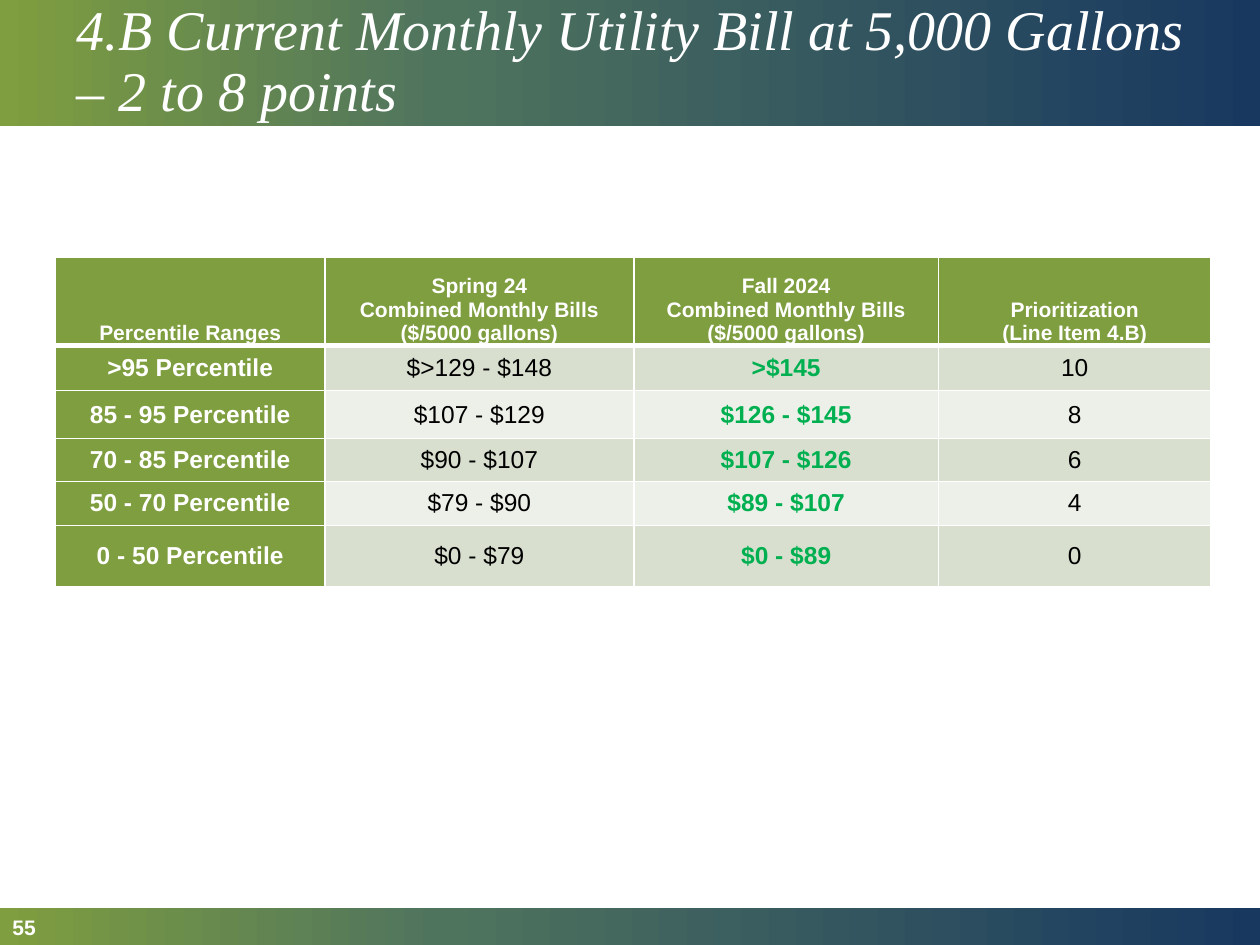
import dataclasses

import lxml.etree
import pptx
import pptx.dml.color
import pptx.enum.shapes
import pptx.enum.text
import pptx.oxml.ns
import pptx.util

Inches = pptx.util.Inches
Pt = pptx.util.Pt
Align = pptx.enum.text.PP_ALIGN
Anchor = pptx.enum.text.MSO_ANCHOR
qn = pptx.oxml.ns.qn

WHITE, BLACK = "FFFFFF", "000000"
OLIVE, GREEN = "7F9E3F", "00B050"
BANDS = ("D8DFCF", "ECF0E8")
STOPS = ((0, OLIVE), (35, "4F745E"), (100, "183860"))


@dataclasses.dataclass
class Box:
    left: float
    top: float
    width: float
    height: float

    def place(self) -> tuple:
        return tuple(map(Inches, (self.left, self.top, self.width, self.height)))


@dataclasses.dataclass
class Row:
    height: float
    texts: tuple


COLS = (2.14, 2.45, 2.42, 2.16)
BILLS = "Combined Monthly Bills ($/5000 gallons)"
ROWS = (
    Row(0.7, ("Percentile Ranges", "Spring 24\n" + BILLS, "Fall 2024\n" + BILLS,
              "Prioritization\n(Line Item 4.B)")),
    Row(0.36, (">95 Percentile", "$>129 - $148", ">$145", "10")),
    Row(0.38, ("85 - 95 Percentile", "$107 - $129", "$126 - $145", "8")),
    Row(0.34, ("70 - 85 Percentile", "$90 - $107", "$107 - $126", "6")),
    Row(0.35, ("50 - 70 Percentile", "$79 - $90", "$89 - $107", "4")),
    Row(0.49, ("0 - 50 Percentile", "$0 - $79", "$0 - $89", "0")),
)


def color(code: str) -> pptx.dml.color.RGBColor:
    return pptx.dml.color.RGBColor.from_string(code)


def write(frame, text: str, *, size: int, hue: str = WHITE, face: str = "Arial",
          bold: bool = False, italic: bool = False, align=Align.LEFT,
          space: float = 1.0) -> None:
    """Fill a text frame, one paragraph for each line of text."""
    frame.word_wrap = True
    frame.text = text
    for para in frame.paragraphs:
        para.alignment = align
        para.line_spacing = space
        for run in para.runs:
            font = run.font
            font.name, font.size = face, Pt(size)
            font.bold, font.italic = bold, italic
            font.color.rgb = color(hue)


def add_band(slide, box: Box) -> None:
    """Draw a bar with a left-to-right gradient."""
    bar = slide.shapes.add_shape(pptx.enum.shapes.MSO_SHAPE.RECTANGLE, *box.place())
    bar.shadow.inherit = False
    bar.line.fill.background()
    bar.fill.gradient()
    bar.fill.gradient_angle = 0
    stops = next(bar.element.spPr.iter(qn("a:gsLst")))
    for stop in list(stops):
        stops.remove(stop)
    for pos, code in STOPS:
        stop = lxml.etree.SubElement(stops, qn("a:gs"), pos=str(pos * 1000))
        lxml.etree.SubElement(stop, qn("a:srgbClr"), val=code)


def add_label(slide, box: Box, text: str, **style) -> None:
    label = slide.shapes.add_textbox(*box.place())
    label.text_frame.vertical_anchor = Anchor.MIDDLE
    write(label.text_frame, text, **style)


def add_edges(cell, top: int, bottom: int) -> None:
    """Give a cell white borders; widths are in points."""
    edges = (("a:lnL", 1), ("a:lnR", 1), ("a:lnT", top), ("a:lnB", bottom))
    props = cell._tc.get_or_add_tcPr()
    for spot, (tag, width) in enumerate(edges):
        line = lxml.etree.Element(qn(tag), w=str(int(Pt(width))))
        fill = lxml.etree.SubElement(line, qn("a:solidFill"))
        lxml.etree.SubElement(fill, qn("a:srgbClr"), val=WHITE)
        props.insert(spot, line)


def add_cell(cell, text: str, row: int, col: int) -> None:
    head = row == 0
    label = head or col == 0
    cell.margin_left = cell.margin_right = Inches(0.07)
    cell.margin_top = cell.margin_bottom = 0
    cell.vertical_anchor = Anchor.BOTTOM if head else Anchor.MIDDLE
    cell.fill.solid()
    cell.fill.fore_color.rgb = color(OLIVE if label else BANDS[(row - 1) % 2])
    hue = WHITE if label else GREEN if col == 2 else BLACK
    write(cell.text_frame, text, size=12 if head else 14, hue=hue,
          bold=label or col == 2, align=Align.CENTER)
    add_edges(cell, top=3 if row == 1 else 1, bottom=3 if head else 1)


def add_grid(slide, left: float, top: float) -> None:
    box = Box(left, top, sum(COLS), sum(row.height for row in ROWS))
    grid = slide.shapes.add_table(len(ROWS), len(COLS), *box.place()).table
    for col, width in enumerate(COLS):
        grid.columns[col].width = Inches(width)
    for num, row in enumerate(ROWS):
        grid.rows[num].height = Inches(row.height)
        for col, text in enumerate(row.texts):
            add_cell(grid.cell(num, col), text, num, col)


def main() -> None:
    deck = pptx.Presentation()
    deck.slide_width, deck.slide_height = Inches(10), Inches(7.5)
    slide = deck.slides.add_slide(deck.slide_layouts[6])

    # Header and footer bars
    add_band(slide, Box(0, 0, 10, 1))
    add_band(slide, Box(0, 7.21, 10, 0.29))

    # Title and page number
    add_label(slide, Box(0.51, 0, 9.1, 1),
              "4.B Current Monthly Utility Bill at 5,000 Gallons – 2 to 8 points",
              size=32, face="Times New Roman", italic=True, space=0.9)
    add_label(slide, Box(0, 7.21, 2.25, 0.29), "55", size=12, bold=True)

    # Percentile table
    add_grid(slide, 0.44, 2.04)

    deck.save("out.pptx")


if __name__ == "__main__":
    main()
